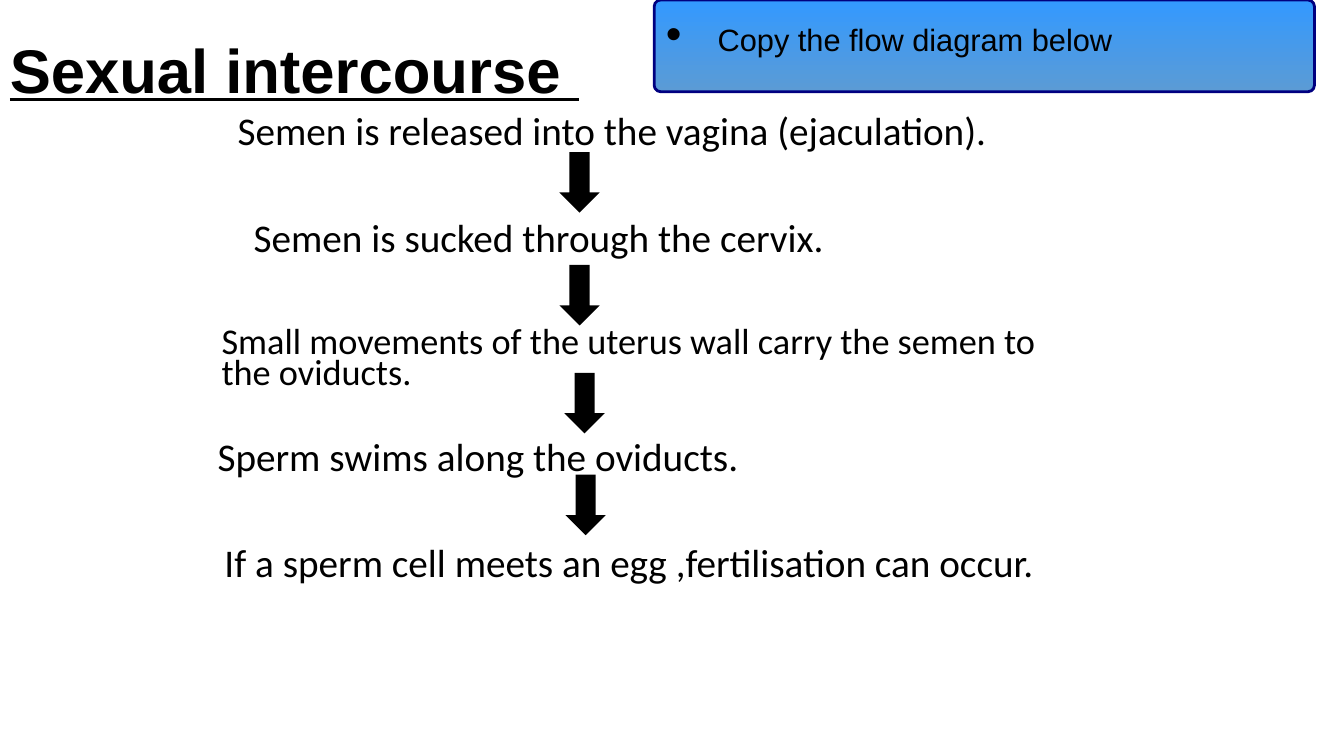
from dataclasses import dataclass

from lxml.etree import SubElement
from pptx import Presentation
from pptx.dml.color import RGBColor
from pptx.enum.shapes import MSO_SHAPE as Shape
from pptx.enum.text import MSO_ANCHOR as Anchor
from pptx.oxml.ns import qn
from pptx.util import Pt


@dataclass(frozen=True)
class Theme:
    ink: RGBColor = RGBColor(0, 0, 0)
    banner_top: RGBColor = RGBColor(0x33, 0x99, 0xFF)
    banner_bottom: RGBColor = RGBColor(0x5B, 0x9B, 0xD5)
    banner_line: RGBColor = RGBColor(0, 0, 0x80)
    heading_font: str = "Arial"
    body_font: str = "Calibri"
    title_size: float = 44
    bullet_size: float = 32
    banner_size: float = 22
    step_size: float = 28
    long_step_size: float = 25.9


THEME = Theme()

# Text, offset in the flow box, size, line spacing
STEPS = [
    ("Semen is released into the vagina (ejaculation).", (14.4, 0), THEME.step_size, 0.9),
    ("Semen is sucked through the cervix.", (25.9, 76.3), THEME.step_size, 0.9),
    ("Small movements of the uterus wall carry the semen to the oviducts.",
     (2.9, 156.2), THEME.long_step_size, 0.7),
    ("Sperm swims along the oviducts.", (0, 232.6), THEME.step_size, 0.9),
    ("If a sperm cell meets an egg ,fertilisation can occur.", (5, 308.2), THEME.step_size, 0.9),
]
ARROW_OFFSETS = [(251.3, 32.4), (251.3, 113), (254.9, 190.1), (255.6, 262.8)]
STEP_SIZE = (609.8, 55.4)
ARROW_SIZE = (28.8, 43.2)


def points(*lengths):
    return [Pt(length) for length in lengths]


def add_run(paragraph, text, font_name, size, bold=False, underline=False):
    run = paragraph.add_run()
    run.text = text
    run.font.name = font_name
    run.font.size = Pt(size)
    run.font.bold = bold
    run.font.underline = underline
    run.font.color.rgb = THEME.ink


def add_text_box(slide, box, line_spacing):
    frame = slide.shapes.add_textbox(*points(*box)).text_frame
    frame.word_wrap = True
    paragraph = frame.paragraphs[0]
    paragraph.line_spacing = line_spacing
    return frame, paragraph


def add_title(slide, box):
    frame, paragraph = add_text_box(slide, box, 0.9)
    frame.vertical_anchor = Anchor.MIDDLE
    add_run(paragraph, "Sexual intercourse ", THEME.heading_font, THEME.title_size,
            bold=True, underline=True)


def add_banner(slide, box):
    banner = slide.shapes.add_shape(Shape.ROUNDED_RECTANGLE, *points(*box))
    banner.shadow.inherit = False
    banner.adjustments[0] = 0.07
    banner.fill.gradient()
    banner.fill.gradient_angle = 270
    for stop, color in zip(banner.fill.gradient_stops, (THEME.banner_top, THEME.banner_bottom)):
        stop.color.rgb = color
    banner.line.color.rgb = THEME.banner_line
    banner.line.width = Pt(2)

    # Bulleted instruction
    frame = banner.text_frame
    frame.word_wrap = True
    frame.vertical_anchor = Anchor.TOP
    paragraph = frame.paragraphs[0]
    properties = paragraph._p.get_or_add_pPr()
    properties.set("algn", "l")
    properties.set("marL", str(Pt(28)))
    properties.set("indent", str(-Pt(28)))
    SubElement(properties, qn("a:buFont"), typeface=THEME.heading_font)
    SubElement(properties, qn("a:buChar"), char="•")
    add_run(paragraph, " ", THEME.heading_font, THEME.bullet_size, bold=True)
    add_run(paragraph, "Copy the flow diagram below", THEME.heading_font, THEME.banner_size)


def add_flow(slide, left, top):
    # Steps
    for text, (x, y), size, spacing in STEPS:
        _, paragraph = add_text_box(slide, (left + x, top + y, *STEP_SIZE), spacing)
        add_run(paragraph, text, THEME.body_font, size)
    # Arrows between the steps
    for x, y in ARROW_OFFSETS:
        arrow = slide.shapes.add_shape(
            Shape.DOWN_ARROW, *points(left + x, top + y, *ARROW_SIZE))
        arrow.shadow.inherit = False
        arrow.fill.solid()
        arrow.fill.fore_color.rgb = THEME.ink
        arrow.line.fill.background()


def main():
    presentation = Presentation()
    presentation.slide_width, presentation.slide_height = points(960, 540)
    slide = presentation.slides.add_slide(presentation.slide_layouts[6])
    add_banner(slide, (467.3, 0, 471.6, 65.5))
    add_title(slide, (0, 0, 828, 104.4))
    add_flow(slide, 148.3, 76.3)
    presentation.save("out.pptx")


if __name__ == "__main__":
    main()
